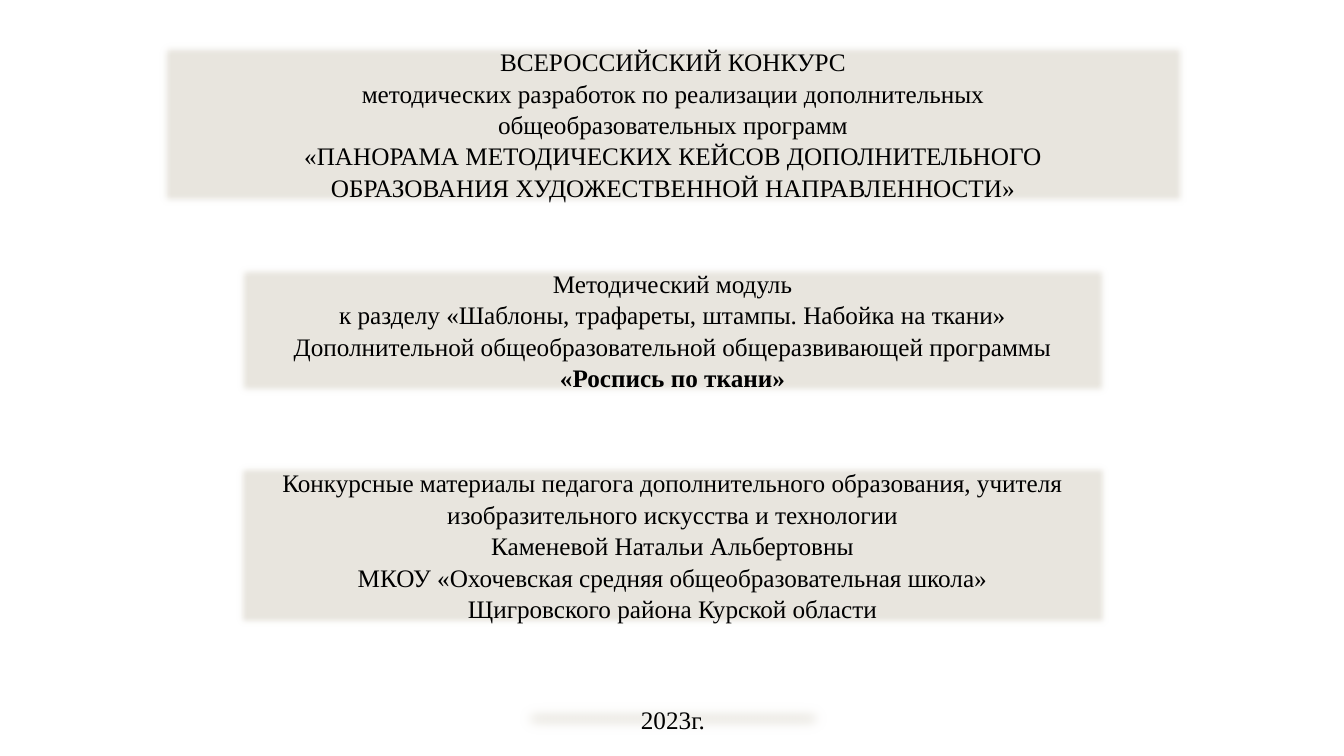
from dataclasses import dataclass
from lxml import etree
from pptx import Presentation
from pptx.dml.color import RGBColor
from pptx.enum.shapes import MSO_SHAPE
from pptx.enum.text import MSO_ANCHOR, MSO_AUTO_SIZE, PP_ALIGN
from pptx.oxml.ns import qn
from pptx.util import Pt

RECT = MSO_SHAPE.RECTANGLE
MIDDLE = MSO_ANCHOR.MIDDLE
GROW = MSO_AUTO_SIZE.SHAPE_TO_FIT_TEXT
CENTER = PP_ALIGN.CENTER
PX = 9525


@dataclass(frozen=True)
class Theme:
    fill: RGBColor = RGBColor(0xE8, 0xE5, 0xDE)
    edge: RGBColor = RGBColor(0x9C, 0xA3, 0x83)
    ink: RGBColor = RGBColor(0, 0, 0)
    font: str = "Times New Roman"
    size: int = Pt(18)
    line: int = Pt(0.5)
    lead: float = 1.04


THEME = Theme()
FRAME = {"word_wrap": True, "auto_size": GROW, "vertical_anchor": MIDDLE}
PARA = {"alignment": CENTER, "line_spacing": THEME.lead}
FONT = {"name": THEME.font, "size": THEME.size}

CONTEST = [
    "ВСЕРОССИЙСКИЙ КОНКУРС",
    "методических разработок по реализации дополнительных",
    "общеобразовательных программ",
    "«ПАНОРАМА МЕТОДИЧЕСКИХ КЕЙСОВ ДОПОЛНИТЕЛЬНОГО",
    "ОБРАЗОВАНИЯ ХУДОЖЕСТВЕННОЙ НАПРАВЛЕННОСТИ»",
]
MODULE = [
    "Методический модуль",
    "к разделу «Шаблоны, трафареты, штампы. Набойка на ткани»",
    "Дополнительной общеобразовательной общеразвивающей программы",
    "«Роспись по ткани»",
]
AUTHOR = [
    "Конкурсные материалы педагога дополнительного образования, "
    "учителя изобразительного искусства и технологии",
    "Каменевой Натальи Альбертовны",
    "МКОУ «Охочевская средняя общеобразовательная школа»",
    "Щигровского района Курской области",
]
TITLE = "«Роспись по ткани»"


def put(item, values):
    for name, value in values.items():
        setattr(item, name, value)


def soften(shape, blur):
    shape.shadow.inherit = False
    effects = shape.element.spPr.find(qn("a:effectLst"))
    etree.SubElement(effects, qn("a:softEdge"), rad=str(blur * PX))


def panel(slide, box, lines, blur):
    shape = slide.shapes.add_shape(RECT, *(side * PX for side in box))
    shape.fill.solid()
    shape.fill.fore_color.rgb = THEME.fill
    shape.line.color.rgb = THEME.edge
    shape.line.width = THEME.line
    soften(shape, blur)
    frame = shape.text_frame
    put(frame, FRAME)
    for index, text in enumerate(lines):
        para = frame.add_paragraph() if index else frame.paragraphs[0]
        put(para, PARA)
        run = para.add_run()
        run.text = text
        put(run.font, FONT)
        run.font.bold = text == TITLE
        run.font.color.rgb = THEME.ink


def cover(slide, box):
    left, top, width, height = box
    for dx, dy, wide, high, lines, blur in (
        (225, 251, 831, 126, MODULE, 7),
        (225, 441, 831, 156, AUTHOR, 7),
        (488, 665, 306, 39, ["2023г."], 13),
        (151, 40, 980, 156, CONTEST, 7),
    ):
        panel(slide, (left + dx, top + dy, wide, high), lines, blur)


def main():
    deck = Presentation()
    wide, high = 1280, 720
    put(deck, {"slide_width": wide * PX, "slide_height": high * PX})
    slide = deck.slides.add_slide(deck.slide_layouts[6])
    cover(slide, (0, 0, wide, high))
    deck.save("out.pptx")


if __name__ == "__main__":
    main()
